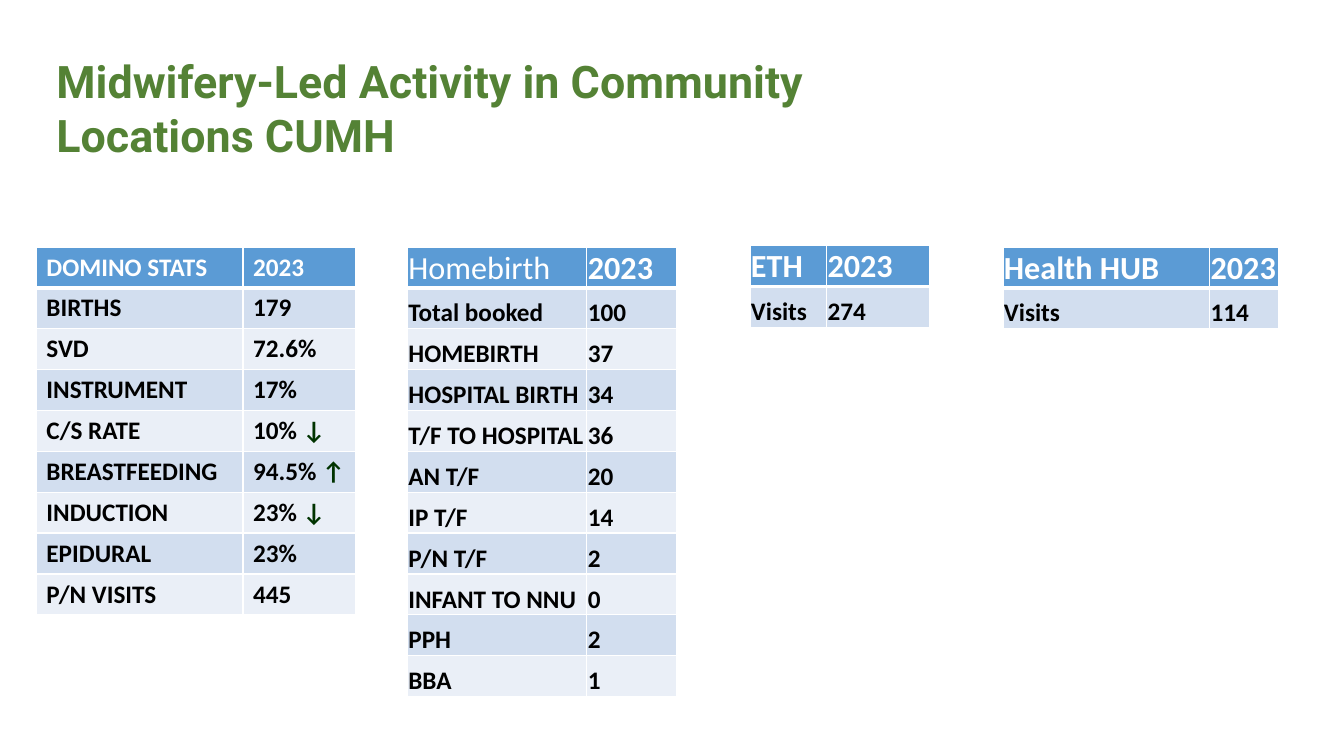
from pptx import Presentation
from pptx.util import Pt
from pptx.dml.color import RGBColor as RGB
from pptx.enum.text import MSO_ANCHOR as Anchor, MSO_AUTO_SIZE as Fit, PP_ALIGN as Align
from pptx.oxml.ns import qn
from lxml.etree import SubElement as Sub

HUE = {"title": "548235", "head": "5B9BD5", "odd": "D2DEEF", "even": "EAEFF7",
       "white": "FFFFFF", "text": "000000", "arrow": "003300"}
ARROWS = "↓↑"
ROW = 29.2

domino = [("DOMINO STATS", "2023"), ("BIRTHS", "179"), ("SVD", "72.6%"),
          ("INSTRUMENT", "17%"), ("C/S RATE", "10% ↓"),
          ("BREASTFEEDING", "94.5% ↑"), ("INDUCTION", "23% ↓"),
          ("EPIDURAL", "23%"), ("P/N VISITS", "445")]
home = [("Homebirth", "2023"), ("Total booked", "100"), ("HOMEBIRTH", "37"),
        ("HOSPITAL BIRTH", "34"), ("T/F TO HOSPITAL", "36"), ("AN T/F", "20"),
        ("IP T/F", "14"), ("P/N T/F", "2"), ("INFANT TO NNU", "0"),
        ("PPH", "2"), ("BBA", "1")]
eth = [("ETH", "2023"), ("Visits", "274")]
hub = [("Health HUB", "2023"), ("Visits", "114")]

# rows, left, top, column widths, header size, tight cells
tables = [(domino, 26, 176.4, (147.6, 80.6), 18, False),
          (home, 291, 176.4, (128.2, 64.1), 23, True),
          (eth, 535.7, 175.4, (54.7, 73.4), 23, True),
          (hub, 716.4, 176.4, (147.6, 49), 23, True)]


def edge(cell, row):
    """Draw white cell borders, thick between the header and the body."""
    props = cell._tc.get_or_add_tcPr()
    for side in "LRTB":
        thick = (side, row) in (("B", 0), ("T", 1))
        line = Sub(props, qn("a:ln" + side), w=str(Pt(3 if thick else 1)))
        Sub(Sub(line, qn("a:solidFill")), qn("a:srgbClr"), val=HUE["white"])


deck = Presentation()
deck.slide_width, deck.slide_height = Pt(960), Pt(540)
slide = deck.slides.add_slide(deck.slide_layouts[5])

title = slide.shapes.title
title.left, title.top, title.width, title.height = Pt(33.1), Pt(34.6), Pt(591), Pt(85)
frame = title.text_frame
frame.text = "Midwifery-Led Activity in Community Locations CUMH"
frame.word_wrap = True
frame.auto_size = Fit.SHAPE_TO_FIT_TEXT
frame.vertical_anchor = Anchor.TOP
para = frame.paragraphs[0]
para.alignment = Align.LEFT
font = para.runs[0].font
font.name, font.size, font.bold = "Roboto", Pt(32), True
font.color.rgb = RGB.from_string(HUE["title"])

for rows, left, top, widths, size, tight in tables:
    grid = slide.shapes.add_table(len(rows), 2, Pt(left), Pt(top),
                                  Pt(sum(widths)), Pt(ROW * len(rows))).table
    for col, width in zip(grid.columns, widths):
        col.width = Pt(width)
    for r, texts in enumerate(rows):
        grid.rows[r].height = Pt(ROW)
        back = "head" if r == 0 else "odd" if r % 2 else "even"
        for c, text in enumerate(texts):
            cell = grid.cell(r, c)
            edge(cell, r)
            cell.fill.solid()
            cell.fill.fore_color.rgb = RGB.from_string(HUE[back])
            if tight:
                cell.vertical_anchor = Anchor.BOTTOM
                cell.margin_left = cell.margin_right = cell.margin_top = Pt(0.72)
                cell.margin_bottom = 0
            main = text.rstrip(ARROWS)
            ink = "text" if r else "white"
            for part, hue in ((main, ink), (text[len(main):], "arrow")):
                if part:
                    run = cell.text_frame.paragraphs[0].add_run()
                    run.text = part
                    run.font.name = "Calibri"
                    run.font.size = Pt(18 if r else size)
                    run.font.bold = text != "Homebirth"
                    run.font.color.rgb = RGB.from_string(HUE[hue])

deck.save("out.pptx")
